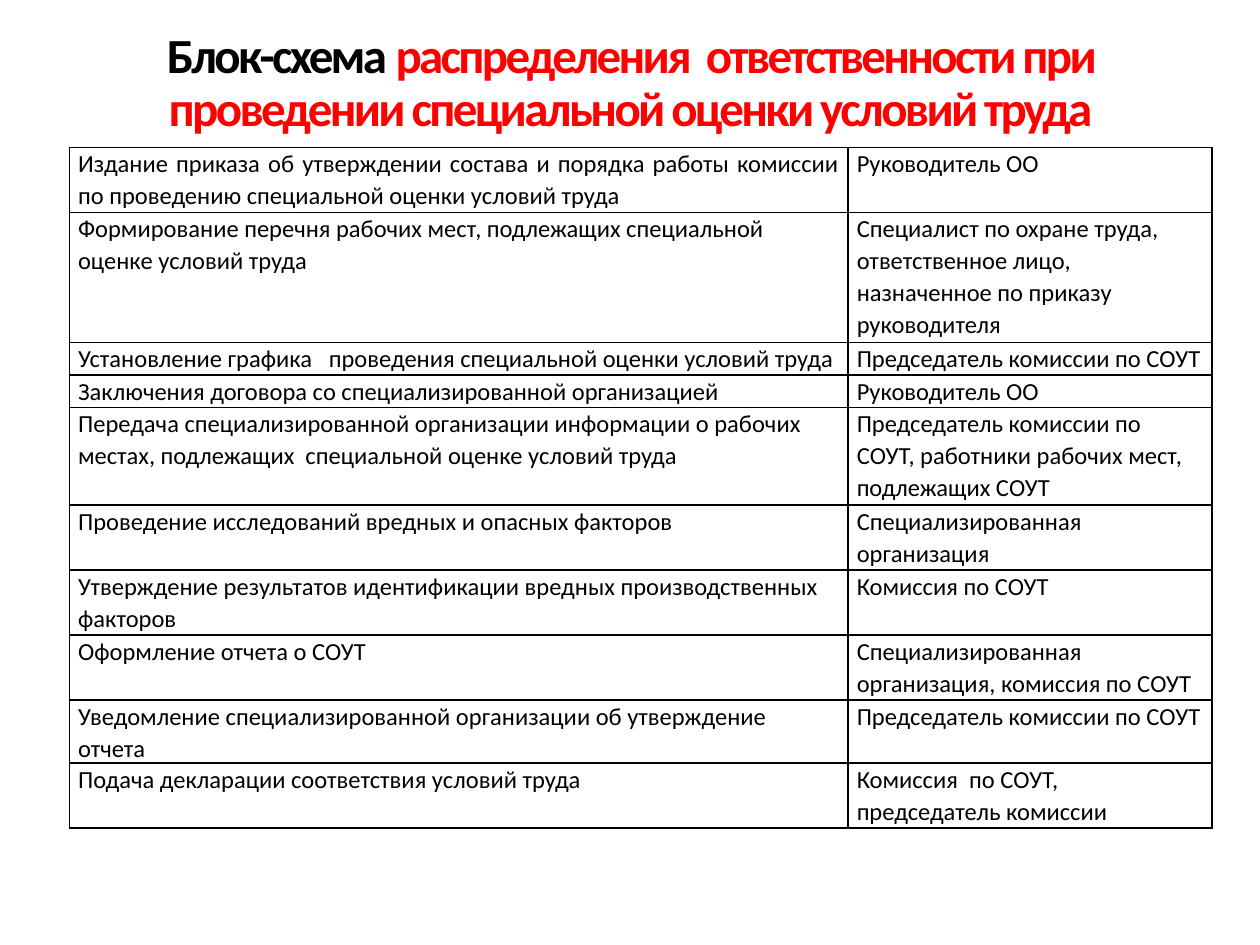
from dataclasses import dataclass

from lxml import etree
from pptx import Presentation
from pptx.dml.color import RGBColor
from pptx.enum.text import MSO_ANCHOR, PP_ALIGN
from pptx.oxml.ns import qn
from pptx.util import Inches, Pt

CENTER, JUSTIFY, LEFT = PP_ALIGN.CENTER, PP_ALIGN.JUSTIFY, PP_ALIGN.LEFT
TOP = MSO_ANCHOR.TOP
BLANK_LAYOUT = 6


@dataclass(frozen=True)
class Theme:
    font: str = "Calibri"
    text: str = "000000"
    accent: str = "FF0000"
    border: str = "000000"
    title_size: float = 28
    body_size: float = 14
    title_tracking: int = -150
    title_spacing: float = 0.9
    body_spacing: float = 1.07
    border_width: float = 1
    cell_margin: float = 0.07


TITLE = (
    ("Блок-схема ", Theme.text),
    ("распределения  ответственности при проведении специальной оценки условий труда", Theme.accent),
)

COLUMN_WIDTHS = (6.18, 2.89)
TABLE_HEIGHT = 5.16

RESPONSIBILITIES = (
    (2, "Издание приказа об утверждении состава и порядка работы комиссии по проведению специальной оценки условий труда",
     "Руководитель ОО"),
    (4, "Формирование перечня рабочих мест, подлежащих специальной оценке условий труда",
     "Специалист по охране труда, ответственное лицо, назначенное по приказу руководителя"),
    (1, "Установление графика   проведения специальной оценки условий труда",
     "Председатель комиссии по СОУТ"),
    (1, "Заключения договора со специализированной организацией",
     "Руководитель ОО"),
    (3, "Передача специализированной организации информации о рабочих местах, подлежащих  специальной оценке условий труда",
     "Председатель комиссии по СОУТ, работники рабочих мест, подлежащих СОУТ"),
    (2, "Проведение исследований вредных и опасных факторов",
     "Специализированная организация"),
    (2, "Утверждение результатов идентификации вредных производственных факторов",
     "Комиссия по СОУТ"),
    (2, "Оформление отчета о СОУТ",
     "Специализированная организация, комиссия по СОУТ"),
    (1, "Уведомление специализированной организации об утверждение отчета",
     "Председатель комиссии по СОУТ"),
    (2, "Подача декларации соответствия условий труда",
     "Комиссия  по СОУТ, председатель комиссии"),
)


class SlideBuilder:
    def __init__(self, slide, theme):
        self.slide = slide
        self.theme = theme

    def format_run(self, run, size, color, bold=False):
        run.font.name = self.theme.font
        run.font.size = Pt(size)
        run.font.bold = bold
        run.font.color.rgb = RGBColor.from_string(color)

    def add_title(self, parts, left, top, width, height):
        shape = self.slide.shapes.add_textbox(Inches(left), Inches(top), Inches(width), Inches(height))
        text_frame = shape.text_frame
        text_frame.word_wrap = True
        text_frame.vertical_anchor = TOP
        text_frame.margin_left = text_frame.margin_right = 0
        text_frame.margin_top = text_frame.margin_bottom = 0
        paragraph = text_frame.paragraphs[0]
        paragraph.alignment = CENTER
        paragraph.line_spacing = self.theme.title_spacing
        for text, color in parts:
            run = paragraph.add_run()
            run.text = text
            self.format_run(run, self.theme.title_size, color, bold=True)
            run.font._element.set("spc", str(self.theme.title_tracking))

    def add_borders(self, cell):
        properties = cell._tc.get_or_add_tcPr()
        for side in ("a:lnL", "a:lnR", "a:lnT", "a:lnB"):
            line = etree.SubElement(properties, qn(side), w=str(Pt(self.theme.border_width)))
            fill = etree.SubElement(line, qn("a:solidFill"))
            etree.SubElement(fill, qn("a:srgbClr"), val=self.theme.border)

    def fill_cell(self, cell, text, alignment):
        cell.margin_left = cell.margin_right = Inches(self.theme.cell_margin)
        cell.margin_top = cell.margin_bottom = 0
        cell.vertical_anchor = TOP
        self.add_borders(cell)
        cell.fill.background()
        cell.text_frame.text = text
        paragraph = cell.text_frame.paragraphs[0]
        paragraph.alignment = alignment
        paragraph.line_spacing = self.theme.body_spacing
        self.format_run(paragraph.runs[0], self.theme.body_size, self.theme.text)

    def add_table(self, rows, column_widths, left, top, height):
        shape = self.slide.shapes.add_table(
            len(rows), len(column_widths),
            Inches(left), Inches(top), Inches(sum(column_widths)), Inches(height))
        table = shape.table
        table.first_row = table.horz_banding = False
        for column, width in zip(table.columns, column_widths):
            column.width = Inches(width)
        line_height = height / sum(lines for lines, *_ in rows)
        for row_index, (lines, *texts) in enumerate(rows):
            table.rows[row_index].height = Inches(lines * line_height)
            for column_index, text in enumerate(texts):
                alignment = JUSTIFY if row_index == column_index == 0 else LEFT
                self.fill_cell(table.cell(row_index, column_index), text, alignment)


def main():
    presentation = Presentation()
    presentation.slide_width = Inches(10)
    presentation.slide_height = Inches(7.5)
    slide = presentation.slides.add_slide(presentation.slide_layouts[BLANK_LAYOUT])
    builder = SlideBuilder(slide, Theme())
    builder.add_title(TITLE, 0.42, 0.25, 9.17, 0.85)
    builder.add_table(RESPONSIBILITIES, COLUMN_WIDTHS, 0.55, 1.17, TABLE_HEIGHT)
    presentation.save("out.pptx")


if __name__ == "__main__":
    main()
